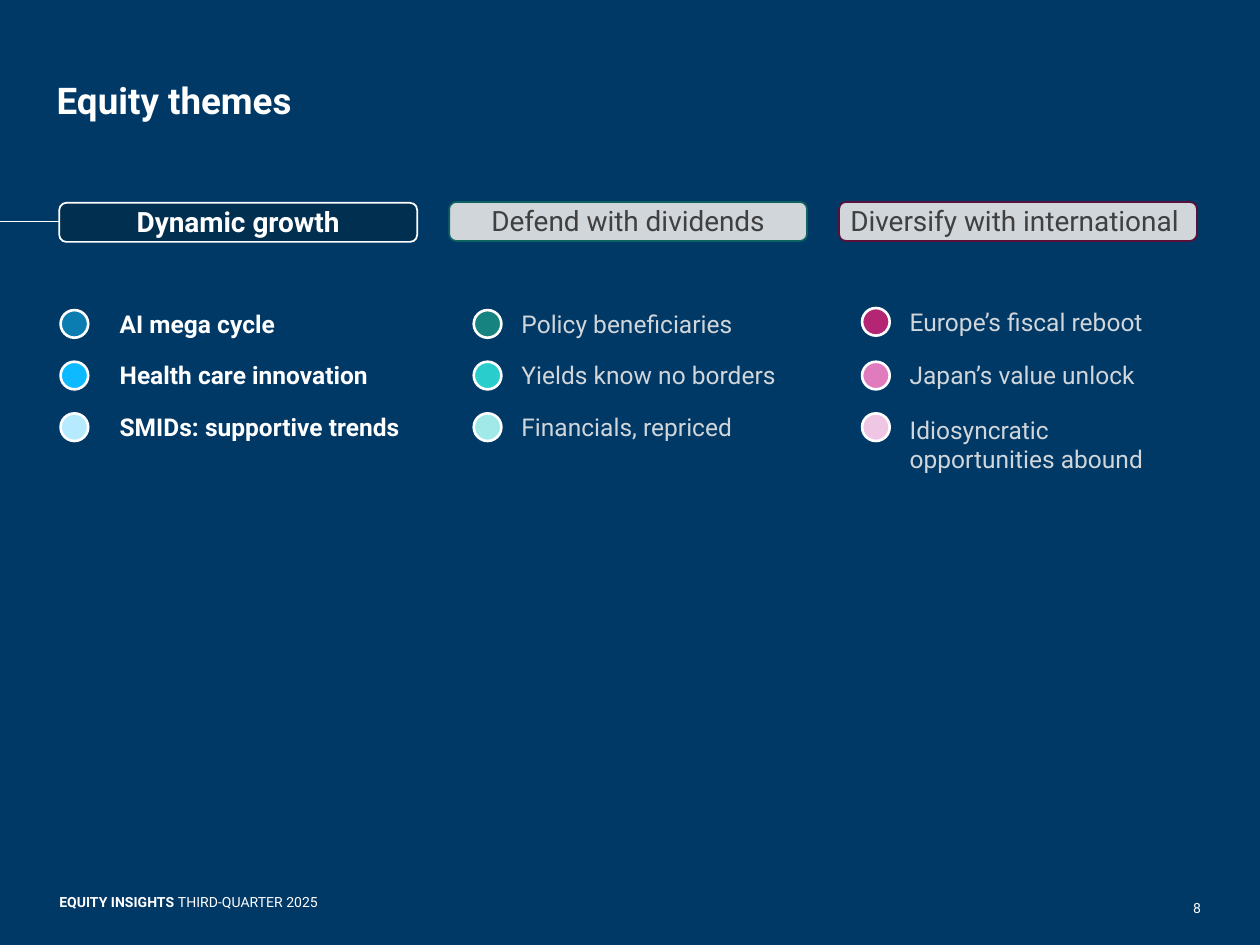
"""Build the equity themes slide: three headed columns of dotted themes."""
from lxml.etree import SubElement
from pptx import Presentation
from pptx.dml.color import RGBColor
from pptx.enum.shapes import MSO_CONNECTOR, MSO_SHAPE
from pptx.enum.text import MSO_ANCHOR, PP_ALIGN
from pptx.oxml.ns import qn
from pptx.util import Pt

FONT = "Roboto"
NAVY = RGBColor(0x00, 0x38, 0x66)
DARK_NAVY = RGBColor(0x00, 0x2F, 0x4F)
WHITE = RGBColor(0xFF, 0xFF, 0xFF)
SILVER = RGBColor(0xD1, 0xD6, 0xDA)
CHARCOAL = RGBColor(0x40, 0x40, 0x40)
DARK_TEAL = RGBColor(0x0E, 0x63, 0x61)
DARK_PLUM = RGBColor(0x5A, 0x11, 0x39)
BLUES = RGBColor(0x0B, 0x7D, 0xB1), RGBColor(0x0D, 0xB9, 0xFF), RGBColor(0xB6, 0xEA, 0xFF)
TEALS = RGBColor(0x16, 0x83, 0x81), RGBColor(0x29, 0xCE, 0xCC), RGBColor(0xA1, 0xE8, 0xE8)
PINKS = RGBColor(0xB4, 0x25, 0x73), RGBColor(0xE0, 0x7C, 0xBD), RGBColor(0xEF, 0xC6, 0xE4)

TITLE = "Equity themes"
COLUMNS = [
    dict(header="Dynamic growth", fill=DARK_NAVY, border=WHITE, header_color=WHITE,
         color=WHITE, bold=True, header_top=115.9, dot_left=34.6, label_left=68.4,
         label_width=180, dots=BLUES, nudges=(0, 0, 0),
         themes=("AI mega cycle", "Health care innovation", "SMIDs: supportive trends")),
    dict(header="Defend with dividends", fill=SILVER, border=DARK_TEAL, header_color=CHARCOAL,
         color=SILVER, bold=False, header_top=115.4, dot_left=270.7, label_left=298,
         label_width=180, dots=TEALS, nudges=(0, 0, 0),
         themes=("Policy beneficiaries", "Yields know no borders", "Financials, repriced")),
    dict(header="Diversify with international ", fill=SILVER, border=DARK_PLUM,
         header_color=CHARCOAL, color=SILVER, bold=False, header_top=115.4, dot_left=492.6,
         label_left=519.8, label_width=148, dots=PINKS, nudges=(-1.2, 0, 1.6),
         themes=("Europe’s fiscal reboot", "Japan’s value unlock",
                 "Idiosyncratic opportunities abound")),
]
FOOTER = [("EQUITY INSIGHTS ", True), ("THIRD-QUARTER 2025", False)]
PAGE_NUMBER = "8"

COLUMN_LEFT, COLUMN_PITCH = 33.9, 222.8
HEADER_WIDTH, HEADER_HEIGHT = 204.5, 22.3
ROW_TOP, ROW_PITCH = 176.4, 29.5
DOT_SIZE, DOT_DROP = 15.8, 0.8


def set_margins(frame, left=0, top=0, right=0, bottom=0):
    frame.margin_left, frame.margin_top = Pt(left), Pt(top)
    frame.margin_right, frame.margin_bottom = Pt(right), Pt(bottom)


def set_font(font, size, color, bold=False):
    font.name, font.size, font.bold = FONT, Pt(size), bold
    font.color.rgb = color


def add_text(page, left, top, width, height, text, size, color, bold=False):
    frame = page.shapes.add_textbox(Pt(left), Pt(top), Pt(width), Pt(height)).text_frame
    frame.word_wrap = True
    set_margins(frame)
    para = frame.paragraphs[0]
    para.text = text
    set_font(para.font, size, color, bold)
    return frame


def add_shape(page, kind, left, top, width, height, fill, border, weight):
    shape = page.shapes.add_shape(kind, Pt(left), Pt(top), Pt(width), Pt(height))
    shape.shadow.inherit = False
    shape.fill.solid()
    shape.fill.fore_color.rgb = fill
    shape.line.color.rgb = border
    shape.line.width = Pt(weight)
    return shape


def add_title(page):
    title = page.shapes.title
    title.left, title.top, title.width, title.height = Pt(-3.6), Pt(13), Pt(720), Pt(90)
    frame = title.text_frame
    frame.vertical_anchor = MSO_ANCHOR.MIDDLE
    set_margins(frame, left=36, right=14.4)
    para = frame.paragraphs[0]
    para.text = TITLE
    para.alignment, para.line_spacing = PP_ALIGN.LEFT, 0.95
    set_font(para.font, 21, WHITE, True)


def add_header(page, left, column):
    box = add_shape(page, MSO_SHAPE.ROUNDED_RECTANGLE, left, column["header_top"],
                    HEADER_WIDTH, HEADER_HEIGHT, column["fill"], column["border"], 1)
    box.adjustments[0] = 0.18
    frame = box.text_frame
    frame.word_wrap = True
    frame.vertical_anchor = MSO_ANCHOR.TOP
    set_margins(frame, bottom=10.8)
    para = frame.paragraphs[0]
    para.text = column["header"]
    para.alignment = PP_ALIGN.CENTER
    set_font(para.font, 16, column["header_color"], column["bold"])


def add_themes(page, column):
    rows = zip(column["themes"], column["dots"], column["nudges"])
    for row, (theme, dot, nudge) in enumerate(rows):
        top = ROW_TOP + row * ROW_PITCH
        add_shape(page, MSO_SHAPE.OVAL, column["dot_left"], top + DOT_DROP + min(nudge, 0),
                  DOT_SIZE, DOT_SIZE, dot, WHITE, 1.5)
        add_text(page, column["label_left"], top + nudge, column["label_width"], 17,
                 theme, 14, column["color"], column["bold"])


def add_lead_line(page):
    line = page.shapes.add_connector(MSO_CONNECTOR.STRAIGHT, Pt(0), Pt(126.7),
                                     Pt(COLUMN_LEFT), Pt(126.7))
    line.line.color.rgb = WHITE
    line.line.width = Pt(0.75)
    SubElement(line.element.spPr, qn("a:effectLst"))


def add_footer(page):
    para = add_text(page, COLUMN_LEFT, 510.5, 443, 9.5, "", 8, WHITE).paragraphs[0]
    for text, bold in FOOTER:
        span = para.add_run()
        span.text = text
        set_font(span.font, 8, WHITE, bold)
    frame = add_text(page, 644.4, 513.4, 41.8, 10, PAGE_NUMBER, 8, WHITE)
    frame.vertical_anchor = MSO_ANCHOR.BOTTOM
    number = frame.paragraphs[0]
    number.alignment, number.line_spacing = PP_ALIGN.RIGHT, 1.1


def main():
    deck = Presentation()
    deck.slide_width, deck.slide_height = Pt(720), Pt(540)
    page = deck.slides.add_slide(deck.slide_layouts[5])
    page.background.fill.solid()
    page.background.fill.fore_color.rgb = NAVY
    add_title(page)
    add_lead_line(page)
    for index, column in enumerate(COLUMNS):
        add_header(page, COLUMN_LEFT + index * COLUMN_PITCH, column)
        add_themes(page, column)
    add_footer(page)
    deck.save("out.pptx")


if __name__ == "__main__":
    main()
